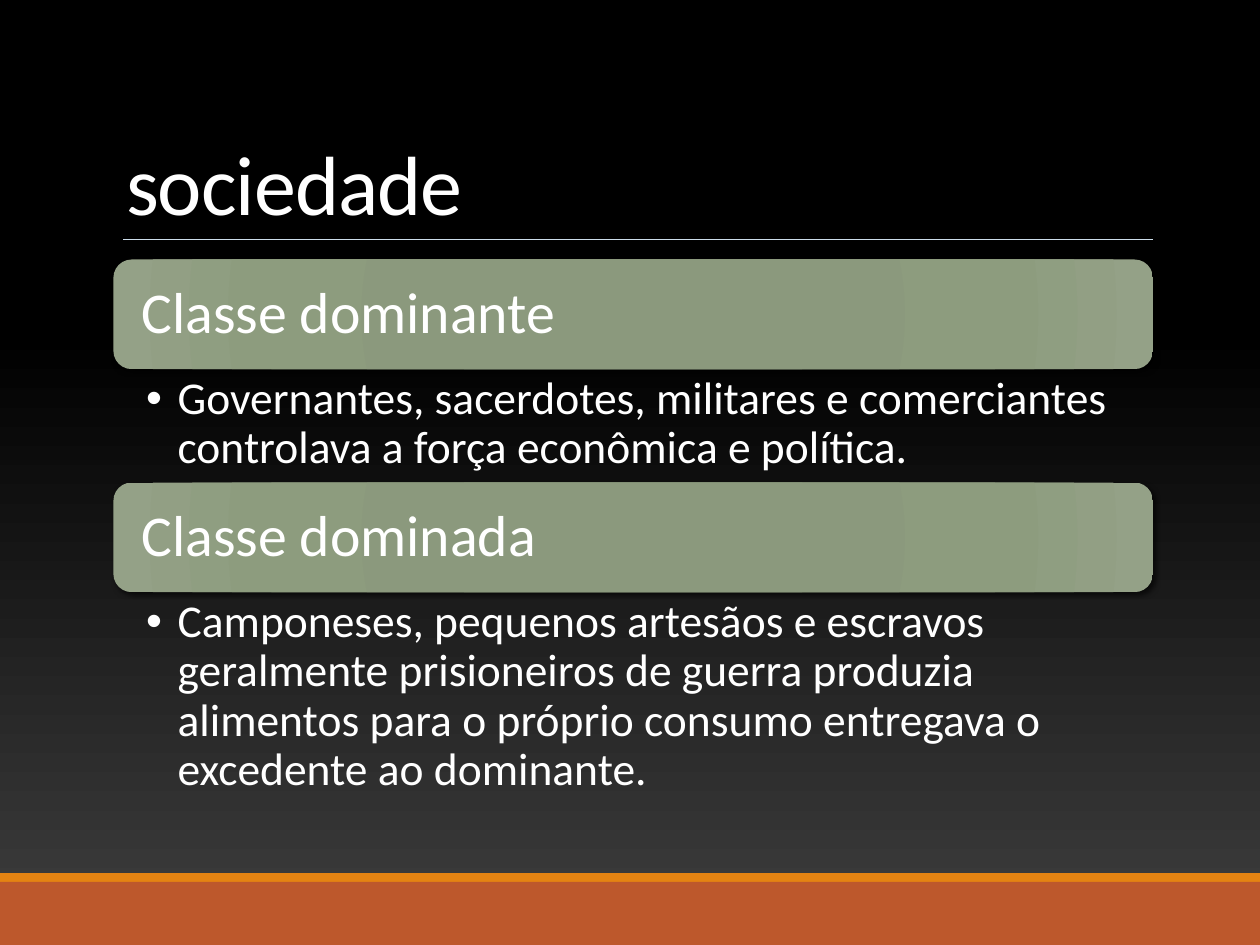
from dataclasses import dataclass

from lxml import etree
from pptx import Presentation
from pptx.dml import color
from pptx.enum import shapes, text
from pptx.oxml import ns
from pptx.util import Inches, Pt


@dataclass(frozen=True)
class Theme:
    font: str = "Calibri"
    ink: str = "FFFFFF"
    rule: str = "CCDDEA"
    stripe: str = "E48312"
    footer: str = "BD582C"
    background: tuple = ((0, "3F3F3F"), (65, "000000"), (100, "000000"))
    banner: tuple = ((0, "8A987B"), (34, "8B997D"), (70, "8D9C7E"), (100, "94A187"))
    title_size: float = 48
    heading_size: float = 33
    body_size: float = 26


THEME = Theme()

GROUPS = [
    ("Classe dominante",
     "Governantes, sacerdotes, militares e comerciantes controlava a força "
     "econômica e política.", 0.9),
    ("Classe dominada",
     "Camponeses, pequenos artesãos e escravos geralmente prisioneiros de guerra "
     "produzia alimentos para o próprio consumo entregava o excedente ao dominante.", 1.68),
]


def add_node(parent, tag, **attributes):
    node = etree.SubElement(parent, ns.qn(tag))
    for name, value in attributes.items():
        node.set(name, str(value))
    return node


def set_gradient(fill, properties, stops, angle=None):
    """Linear gradient at an angle, or a circular one when there is none."""
    fill.solid()
    solid = properties.find(ns.qn("a:solidFill"))
    gradient = etree.Element(ns.qn("a:gradFill"), rotWithShape="1")
    stop_list = add_node(gradient, "a:gsLst")
    for position, value in stops:
        stop = add_node(stop_list, "a:gs", pos=position * 1000)
        add_node(stop, "a:srgbClr", val=value)
    if angle is None:
        circle = add_node(gradient, "a:path", path="circle")
        add_node(circle, "a:fillToRect", l=100000, t=100000, r=100000, b=100000)
    else:
        add_node(gradient, "a:lin", ang=angle * 60000, scaled=0)
    properties.replace(solid, gradient)


def place(shape, box):
    shape.left, shape.top, shape.width, shape.height = (Inches(value) for value in box)


def write(shape, content, size, anchor, line_spacing=0.9, inset=(0.1, 0.05),
          tracking=None, bullet=False):
    frame = shape.text_frame
    frame.word_wrap = True
    frame.auto_size = text.MSO_AUTO_SIZE.NONE
    frame.vertical_anchor = anchor
    frame.margin_left = frame.margin_right = Inches(inset[0])
    frame.margin_top = frame.margin_bottom = Inches(inset[1])
    paragraph = frame.paragraphs[0]
    paragraph.alignment = text.PP_ALIGN.LEFT
    paragraph.line_spacing = line_spacing
    paragraph.space_before = Pt(0)
    run = paragraph.add_run()
    run.text = content
    run.font.name = THEME.font
    run.font.size = Pt(size)
    run.font.color.rgb = color.RGBColor.from_string(THEME.ink)
    if tracking is not None:
        run.font._element.set("spc", str(int(tracking * 100)))
    if bullet:
        properties = paragraph._p.get_or_add_pPr()
        properties.set("marL", str(Inches(0.25)))
        properties.set("indent", str(Inches(-0.25)))
        add_node(properties, "a:buChar", char="•")


def add_title(slide, box):
    title = slide.shapes.title
    place(title, box)
    write(title, "sociedade", THEME.title_size, text.MSO_ANCHOR.BOTTOM,
          line_spacing=0.85, tracking=-0.5)
    # Thin rule under the title
    left, top, width, height = box
    y = Inches(top + height)
    rule = slide.shapes.add_connector(
        shapes.MSO_CONNECTOR.STRAIGHT, Inches(left + 0.08), y, Inches(left + width), y)
    rule.line.width = Pt(0.5)
    rule.line.color.rgb = color.RGBColor.from_string(THEME.rule)
    add_node(rule._element.spPr, "a:effectLst")


def add_band(slide, box, fill_color):
    band = slide.shapes.add_shape(
        shapes.MSO_SHAPE.RECTANGLE, *(Inches(value) for value in box))
    band.shadow.inherit = False
    band.fill.solid()
    band.fill.fore_color.rgb = color.RGBColor.from_string(fill_color)
    band.line.fill.background()


def add_banner(slide, box, heading):
    banner = slide.shapes.add_shape(
        shapes.MSO_SHAPE.ROUNDED_RECTANGLE, *(Inches(value) for value in box))
    properties = banner._element.spPr
    set_gradient(banner.fill, properties, THEME.banner)
    banner.line.fill.background()
    # Soft shadow towards the lower right
    banner.shadow.inherit = False
    effects = properties.find(ns.qn("a:effectLst"))
    shadow = add_node(effects, "a:outerShdw", blurRad=Pt(3), dist=Pt(2),
                      dir=45 * 60000, algn="tl", rotWithShape=0)
    add_node(add_node(shadow, "a:srgbClr", val="000000"), "a:alpha", val=60000)
    write(banner, heading, THEME.heading_size, text.MSO_ANCHOR.MIDDLE, inset=(0.18, 0.14))


def add_groups(slide, box):
    """Stacks each banner and its list down the box."""
    left, top, width, _ = box
    banner_height = 0.87
    bodies = [item for item in slide.placeholders if item.placeholder_format.idx > 0]
    for body, (heading, content, body_height) in zip(bodies, GROUPS):
        add_banner(slide, (left, top, width, banner_height), heading)
        top += banner_height
        place(body, (left, top, width, body_height))
        write(body, content, THEME.body_size, text.MSO_ANCHOR.TOP,
              inset=(0.26, 0.05), bullet=True)
        top += body_height


def main():
    presentation = Presentation()
    presentation.slide_width = Inches(10)
    presentation.slide_height = Inches(7.5)
    slide = presentation.slides.add_slide(presentation.slide_layouts.get_by_name("Two Content"))
    background = slide.background.fill
    set_gradient(background, slide._element.cSld.bg.bgPr, THEME.background, angle=270)

    add_title(slide, (0.9, 0.31, 8.25, 1.59))
    # Footer stripes
    add_band(slide, (0, 6.93, 10, 0.07), THEME.stripe)
    add_band(slide, (0, 7, 10, 0.5), THEME.footer)
    add_groups(slide, (0.9, 2.06, 8.25, 4.32))
    presentation.save("out.pptx")


if __name__ == "__main__":
    main()
